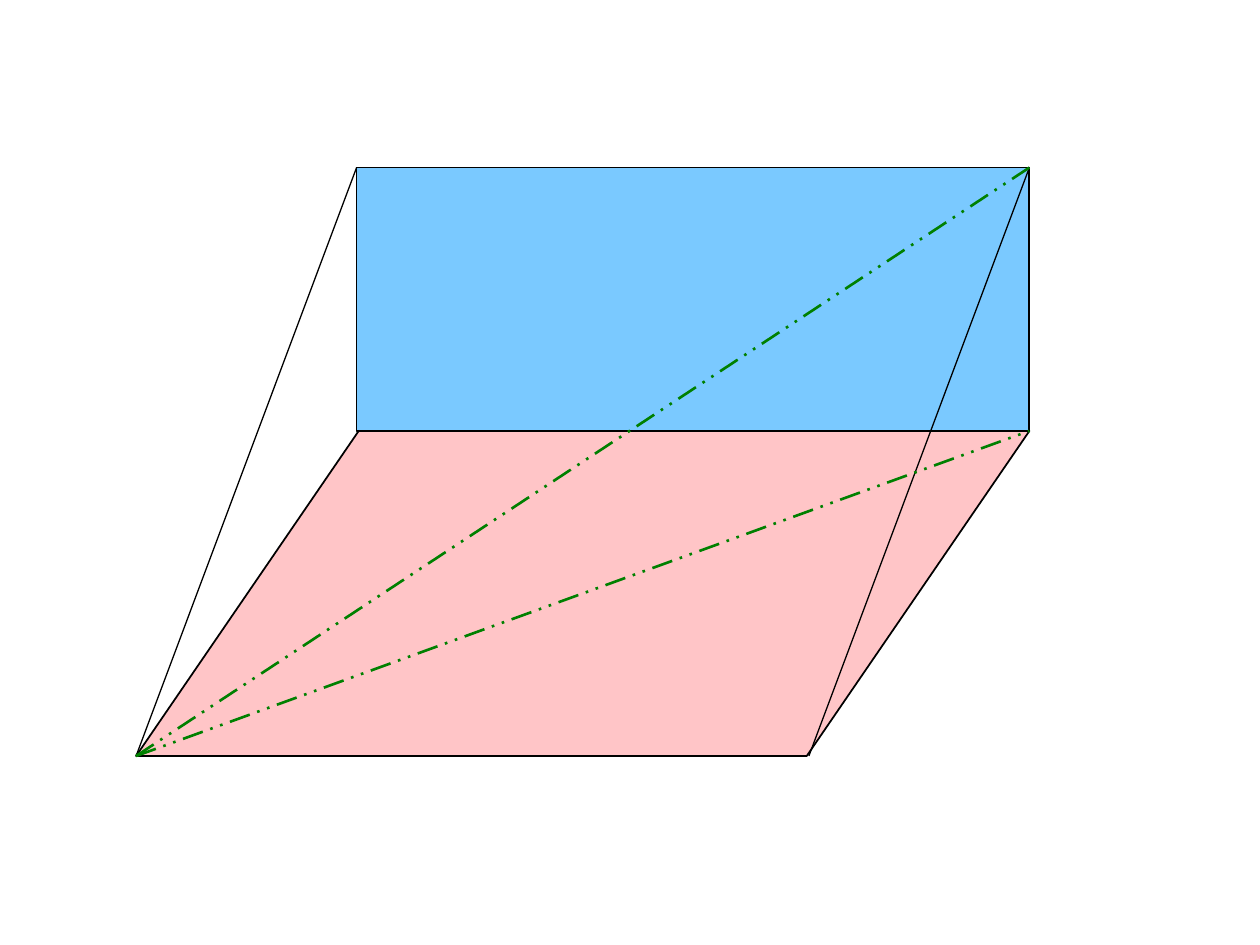
from lxml import etree
from pptx import Presentation
from pptx.dml.color import RGBColor
from pptx.enum import dml, shapes
from pptx.oxml import ns
from pptx.util import Inches, Pt

HUES = {"wall": "0099FF", "floor": "FF7C80", "edge": "000000", "diag": "008000"}


def add_face(slide, kind, box, hue, alpha):
    """Add an outlined face whose fill has the given opacity in percent."""
    face = slide.shapes.add_shape(kind, *map(Inches, box))
    face.shadow.inherit = False
    face.fill.solid()
    face.fill.fore_color.rgb = RGBColor.from_string(HUES[hue])
    tint = face._element.spPr.find(".//" + ns.qn("a:srgbClr"))
    etree.SubElement(tint, ns.qn("a:alpha"), val=str(alpha * 1000))
    face.line.color.rgb = RGBColor.from_string(HUES["edge"])
    face.line.width = Pt(1)
    return face


def add_line(slide, start, end, hue, width, dash=None):
    line = slide.shapes.add_connector(
        shapes.MSO_CONNECTOR.STRAIGHT, *map(Inches, start + end))
    etree.SubElement(line._element.spPr, ns.qn("a:effectLst"))
    line.line.color.rgb = RGBColor.from_string(HUES[hue])
    line.line.width = Pt(width)
    if dash:
        line.line.dash_style = dash


def add_prism(slide, left, top, width, height):
    """Draw a wall above a slanted floor, with side edges and diagonals."""
    slant, rise = 1.75, 2.09
    right, base = left + width, top + height
    fold = top + rise
    kind = shapes.MSO_SHAPE
    add_face(slide, kind.RECTANGLE,
             (left + slant, top, width - slant, rise), "wall", 52)
    floor = add_face(slide, kind.PARALLELOGRAM,
                     (left, fold, width, base - fold), "floor", 44)
    floor.adjustments[0] = 0.685
    for x in (left + slant, right):
        add_line(slide, (x, top), (x - slant, base), "edge", 0.75)
    for y in (fold, top):
        add_line(slide, (left, base), (right, y), "diag", 1.5,
                 dml.MSO_LINE.DASH_DOT_DOT)


def main():
    deck = Presentation()
    deck.slide_width, deck.slide_height = Inches(10), Inches(7.5)
    slide = deck.slides.add_slide(deck.slide_layouts[6])
    add_prism(slide, 1.08, 1.33, 7.09, 4.67)
    deck.save("out.pptx")


if __name__ == "__main__":
    main()
